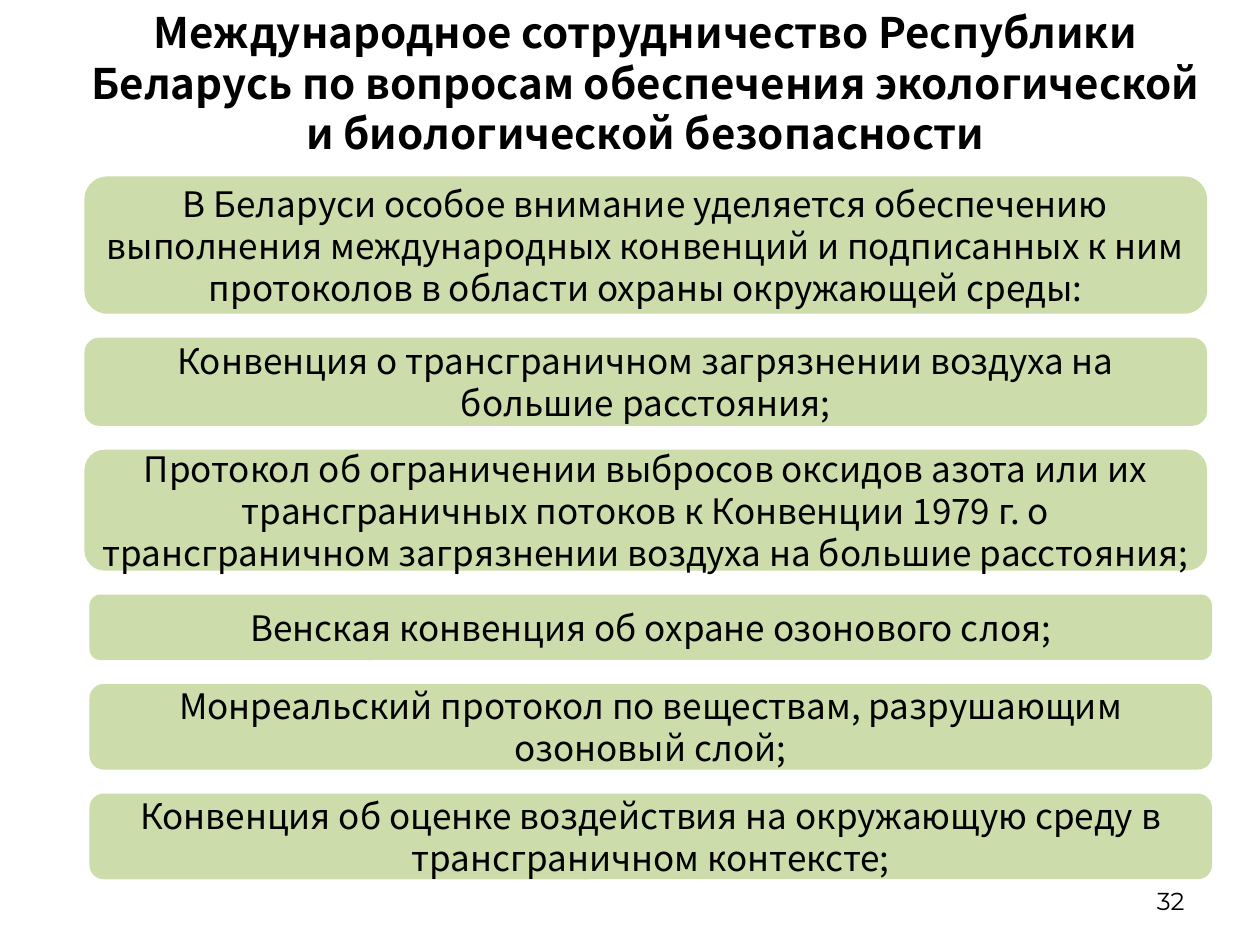
import pptx
import pptx.util
import pptx.dml.color
import pptx.enum.shapes
import pptx.enum.text
import lxml.etree
import pptx.oxml.ns

SLIDE_WIDTH = pptx.util.Inches(10)
SLIDE_HEIGHT = pptx.util.Inches(7.5)
COLORS = {"text": "000000", "panel": "9BBB59"}
BODY_FONT = "Noto Sans CJK JP"
NUMBER_FONT = "Montserrat"
LINE_PITCH = 1.2  # line height as a multiple of the text size

TITLE = ("Международное сотрудничество Республики Беларусь по вопросам "
         "обеспечения экологической и биологической безопасности")

# Panels: left edge and height in percent of the slide, then wording
PANELS = [
    (6.7, 14.53, "В Беларуси особое внимание уделяется обеспечению выполнения "
                 "международных конвенций и подписанных к ним протоколов "
                 "в области охраны окружающей среды:"),
    (6.7, 9.33, "Конвенция о трансграничном загрязнении воздуха "
                "на большие расстояния;"),
    (6.7, 12.8, "Протокол об ограничении выбросов оксидов азота или их "
                "трансграничных потоков к Конвенции 1979 г. о трансграничном "
                "загрязнении воздуха на большие расстояния;"),
    (7.1, 6.93, "Венская конвенция об охране озонового слоя;"),
    (7.1, 9.07, "Монреальский протокол по веществам, разрушающим "
                "озоновый слой;"),
    (7.1, 9.07, "Конвенция об оценке воздействия на окружающую среду "
                "в трансграничном контексте;"),
]
PANEL_TOP = 18.67
PANEL_WIDTH = 89.1
PANEL_GAP = 2.53


def place(left, top, width, height):
    """Turn percentages of the slide into lengths."""
    return (int(SLIDE_WIDTH * left / 100), int(SLIDE_HEIGHT * top / 100),
            int(SLIDE_WIDTH * width / 100), int(SLIDE_HEIGHT * height / 100))


def write_text(box, text, size, font=BODY_FONT, bold=False, align="CENTER"):
    frame = box.text_frame
    frame.word_wrap = True
    frame.vertical_anchor = pptx.enum.text.MSO_ANCHOR.MIDDLE
    frame.text = text
    para = frame.paragraphs[0]
    para.alignment = pptx.enum.text.PP_ALIGN[align]
    para.line_spacing = pptx.util.Pt(size * LINE_PITCH)
    for span in para.runs:
        span.font.name = font
        span.font.size = pptx.util.Pt(size)
        span.font.bold = bold
        span.font.color.rgb = pptx.dml.color.RGBColor.from_string(COLORS["text"])


def add_label(page, area, text, size, **style):
    box = page.shapes.add_textbox(*place(*area))
    write_text(box, text, size, **style)


def add_panel(page, area, text):
    panel = page.shapes.add_shape(
        pptx.enum.shapes.MSO_SHAPE.ROUNDED_RECTANGLE, *place(*area))
    panel.shadow.inherit = False
    panel.line.fill.background()
    panel.fill.solid()
    panel.fill.fore_color.rgb = pptx.dml.color.RGBColor.from_string(COLORS["panel"])
    # Half-transparent fill
    tint = panel.fill._xPr.find(".//" + pptx.oxml.ns.qn("a:srgbClr"))
    lxml.etree.SubElement(tint, pptx.oxml.ns.qn("a:alpha"), val="50000")
    write_text(panel, text, 20)


def main():
    deck = pptx.Presentation()
    deck.slide_width = SLIDE_WIDTH
    deck.slide_height = SLIDE_HEIGHT
    page = deck.slides.add_slide(deck.slide_layouts[6])

    # Page number and title
    add_label(page, (71.7, 92.67, 23.3, 5.33), "32", 14,
              font=NUMBER_FONT, align="RIGHT")
    add_label(page, (6.2, 1.07, 90, 15.33), TITLE, 24, bold=True)

    # Panels stacked with equal gaps
    top = PANEL_TOP
    for left, height, text in PANELS:
        add_panel(page, (left, top, PANEL_WIDTH, height), text)
        top += height + PANEL_GAP

    deck.save("out.pptx")


if __name__ == "__main__":
    main()
